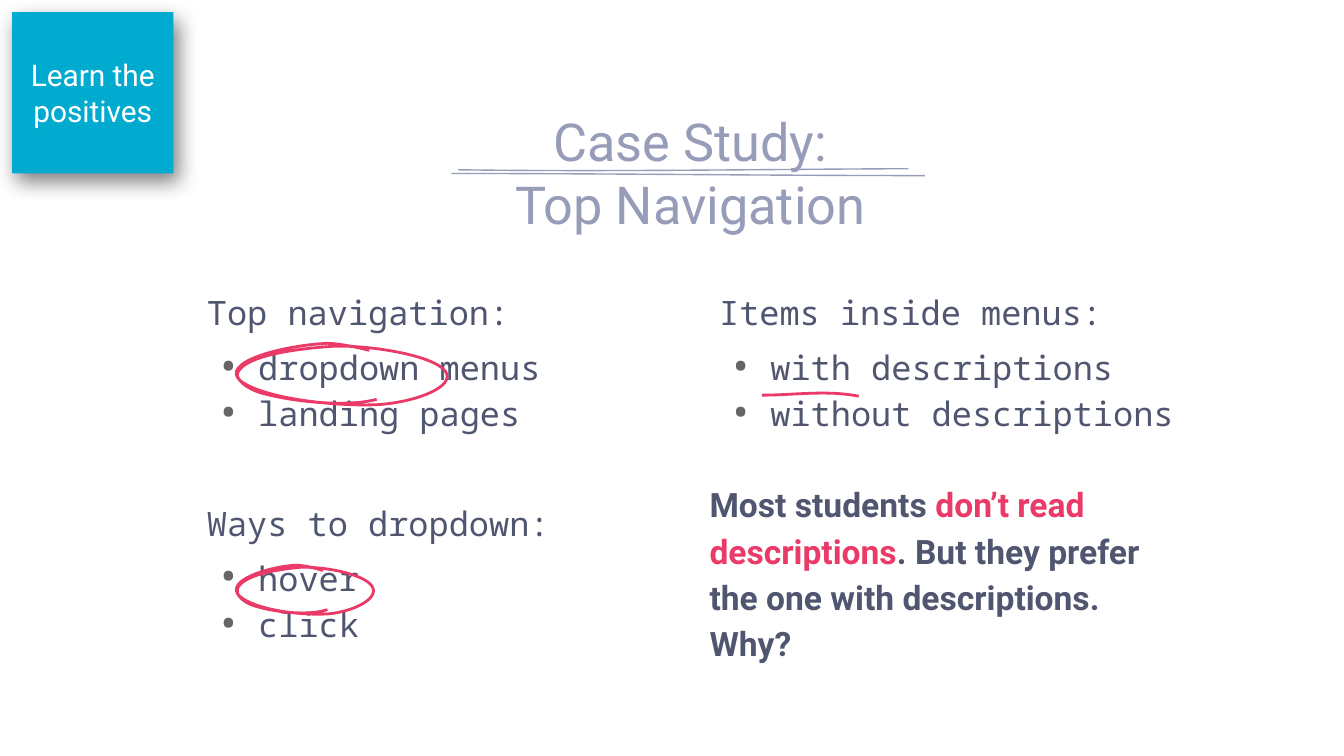
from lxml import etree
from pptx import Presentation
from pptx.dml.color import RGBColor
from pptx.enum.shapes import MSO_SHAPE
from pptx.enum.text import MSO_ANCHOR, MSO_AUTO_SIZE, PP_ALIGN
from pptx.oxml.ns import qn
from pptx.util import Cm, Pt

RECTANGLE = MSO_SHAPE.RECTANGLE
TOP, MIDDLE, BOTTOM = MSO_ANCHOR.TOP, MSO_ANCHOR.MIDDLE, MSO_ANCHOR.BOTTOM
LEFT, CENTER = PP_ALIGN.LEFT, PP_ALIGN.CENTER
NO_AUTOFIT = MSO_AUTO_SIZE.NONE

COLORS = {"ink": "505670", "title": "979CB8", "accent": "EA3A68",
          "note": "01ABCF", "white": "FFFFFF", "bullet": "666666",
          "shadow": "000000"}
SANS, MONO = "Roboto", "Noto Sans Mono"
TWO_CONTENT = 3
GAP, SECTION_GAP = 4.5, 33.8

# Hand-drawn ring: a start point, then (control, control, end) triples, in cm.
RING = [(2.49, 0.1),
        (2.24, 0.05), (1.96, 0), (1.7, 0),
        (0.81, 0.08), (-0.36, 0.46), (0.1, 0.79),
        (0.56, 1.09), (1.85, 1.19), (2.69, 1.12),
        (3.43, 1.04), (4.17, 0.71), (3.94, 0.43),
        (3.71, 0.15), (2.54, 0), (1.83, 0.05),
        (1.07, 0.13), (0.18, 0.3), (0.03, 0.61),
        (-0.03, 0.74), (0.18, 0.91), (0.48, 0.99),
        (1.12, 1.14), (2.13, 1.19), (2.67, 1.02)]


def rgb(name):
    return RGBColor.from_string(COLORS[name])


def add_xml(parent, tag, **attrs):
    return etree.SubElement(parent, qn(tag), {k: str(v) for k, v in attrs.items()})


class SlideBuilder:
    def __init__(self, slide):
        self.slide = slide

    def place(self, sp, left, top, width, height):
        sp.left, sp.top, sp.width, sp.height = map(Cm, (left, top, width, height))

    def frame(self, sp, anchor=TOP):
        tf = sp.text_frame
        tf.word_wrap = True
        tf.auto_size = NO_AUTOFIT
        tf.vertical_anchor = anchor
        tf.margin_left = tf.margin_right = tf.margin_top = tf.margin_bottom = Cm(0.18)
        return tf

    def style(self, p, font, size, color, align=LEFT, bold=False, spacing=1.0, before=0):
        p.alignment = align
        p.line_spacing = spacing
        p.space_before = Pt(before)
        for r in p.runs:
            r.font.name, r.font.size, r.font.bold = font, Pt(size), bold
            r.font.color.rgb = rgb(color)

    def bullet(self, p, shown):
        pPr = p._p.get_or_add_pPr()
        pPr.set("marL", str(Cm(0.97) if shown else 0))
        pPr.set("indent", str(-Cm(0.71) if shown else 0))
        if not shown:
            add_xml(pPr, "a:buNone")
            return
        add_xml(add_xml(pPr, "a:buClr"), "a:srgbClr", val=COLORS["bullet"])
        add_xml(pPr, "a:buSzPct", val=140000)
        add_xml(pPr, "a:buFont", typeface=SANS)
        add_xml(pPr, "a:buChar", char="•")

    def title(self, lines, *box):
        sp = self.slide.shapes.title
        self.place(sp, *box)
        tf = self.frame(sp, BOTTOM)
        tf.text = "\n".join(lines)
        for p in tf.paragraphs:
            self.style(p, SANS, 28, "title", CENTER)

    def sections(self, idx, groups, *box):
        """Fill a body placeholder with headings, each followed by its bullets."""
        sp = self.slide.placeholders[idx]
        self.place(sp, *box)
        tf = self.frame(sp)
        rows = []
        for g, (heading, items) in enumerate(groups):
            rows.append((heading, False, SECTION_GAP if g else 0))
            rows += [(item, True, 0 if i else GAP) for i, item in enumerate(items)]
        tf.text = "\n".join(row[0] for row in rows)
        for p, (_, bulleted, before) in zip(tf.paragraphs, rows):
            self.bullet(p, bulleted)
            self.style(p, MONO, 18, "ink", spacing=1.15, before=before)

    def remark(self, parts, *box):
        sp = self.slide.shapes.add_textbox(*map(Cm, box))
        p = self.frame(sp).paragraphs[0]
        for text, _ in parts:
            p.add_run().text = text
        self.style(p, SANS, 18, "ink", bold=True, spacing=1.15)
        for r, (_, color) in zip(p.runs, parts):
            r.font.color.rgb = rgb(color)

    def curve(self, points, color, width, rotation=0):
        """Draw an open Bezier path from a start point and triples of points."""
        points = [(Cm(x), Cm(y)) for x, y in points]
        builder = self.slide.shapes.build_freeform(*points[0])
        builder.add_line_segments(points[3::3], close=False)
        sp = builder.convert_to_shape()
        for i, line in enumerate(list(sp._element.iter(qn("a:lnTo")))):
            bezier = etree.Element(qn("a:cubicBezTo"))
            for x, y in points[3 * i + 1:3 * i + 4]:
                add_xml(bezier, "a:pt", x=x - sp.left, y=y - sp.top)
            line.getparent().replace(line, bezier)
        sp.fill.background()
        sp.line.color.rgb = rgb(color)
        sp.line.width = Pt(width)
        sp.shadow.inherit = False
        sp.rotation = rotation

    def ring(self, left, top, scale_x=1, scale_y=1):
        points = [(left + x * scale_x, top + y * scale_y) for x, y in RING]
        self.curve(points, "accent", 1.5, rotation=2.4)

    def sticky_note(self, text, *box):
        sp = self.slide.shapes.add_shape(RECTANGLE, *map(Cm, box))
        sp.fill.solid()
        sp.fill.fore_color.rgb = rgb("note")
        sp.line.fill.background()
        sp.shadow.inherit = False
        effects = sp._element.spPr.find(qn("a:effectLst"))
        shadow = add_xml(effects, "a:outerShdw", blurRad=Pt(11.2), dist=Pt(5.2),
                         dir=61 * 60000, algn="bl", rotWithShape=0)
        add_xml(add_xml(shadow, "a:srgbClr", val=COLORS["shadow"]), "a:alpha", val=50000)
        tf = self.frame(sp, MIDDLE)
        tf.text = text
        self.style(tf.paragraphs[0], SANS, 16, "white", CENTER)


def main():
    prs = Presentation()
    prs.slide_width, prs.slide_height = Cm(25.4), Cm(14.29)
    s = SlideBuilder(prs.slides.add_slide(prs.slide_layouts[TWO_CONTENT]))

    s.curve([(8.66, 3.21), (11.51, 3.25), (14.33, 3.2), (17.17, 3.19)], "title", 0.75)
    s.curve([(8.53, 3.28), (11.51, 3.28), (14.5, 3.32), (17.48, 3.32)], "title", 0.75)
    s.title(["Case Study:", "Top Navigation"], 8.36, 2.64, 9.37, 1.98)

    s.sections(1, [("Top navigation:", ["dropdown menus", "landing pages"]),
                   ("Ways to dropdown:", ["hover", "click"])],
               3.73, 5.23, 9.17, 6.81)
    s.sections(2, [("Items inside menus:", ["with descriptions", "without descriptions"])],
               13.41, 5.23, 9.17, 3)
    s.remark([("Most students ", "ink"), ("don’t read descriptions", "accent"),
              (". But they prefer the one with descriptions. Why?", "ink")],
             13.23, 8.86, 9.17, 3.2)

    s.curve([(16.23, 7.49), (15.62, 7.37), (15.01, 7.47), (14.4, 7.47)], "accent", 1.5)
    s.ring(4.47, 6.5)
    s.ring(4.47, 10.69, 0.65, 0.8)
    s.sticky_note("Learn the positives", 0.23, 0.23, 3.05, 3.05)
    prs.save("out.pptx")


if __name__ == "__main__":
    main()
